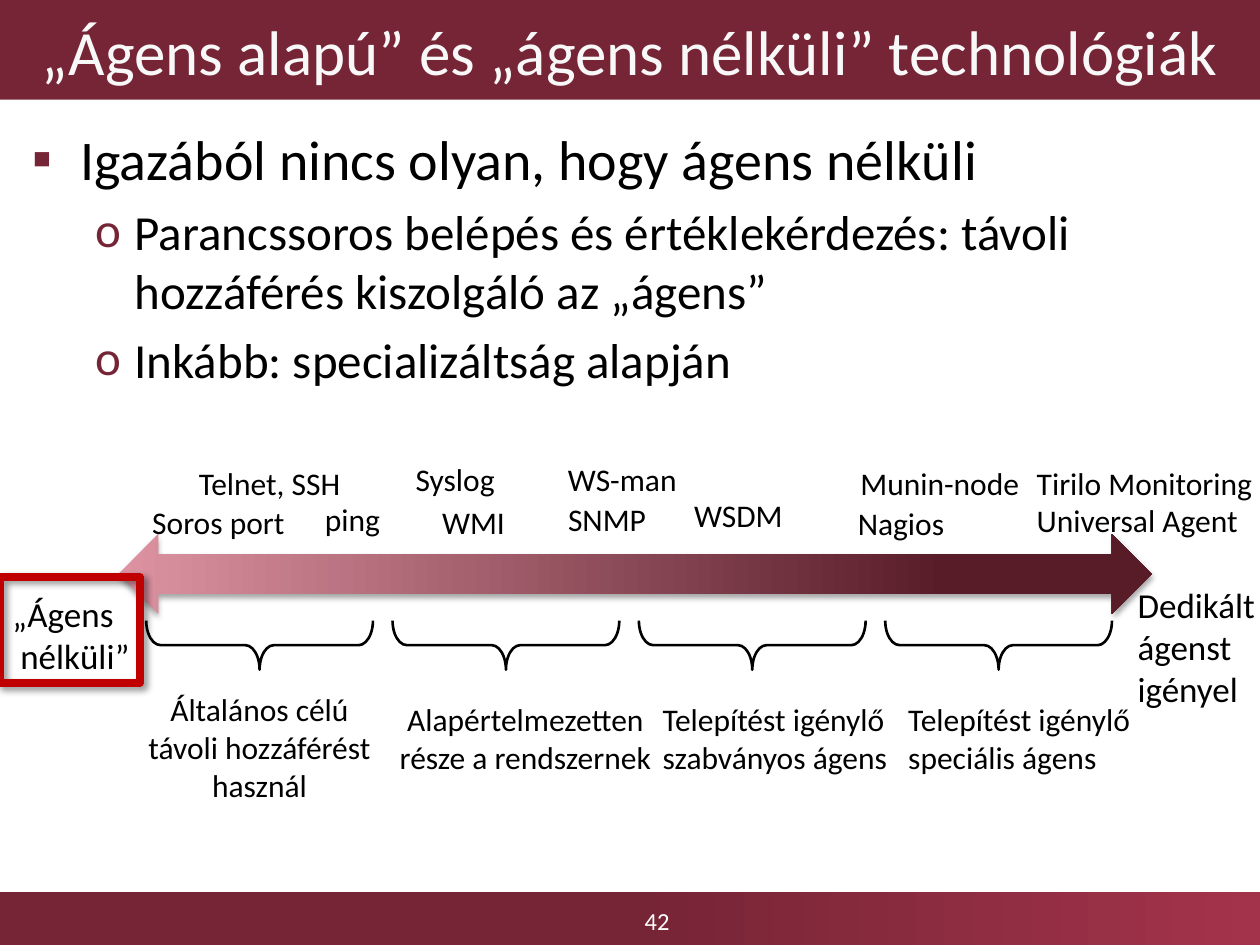
from dataclasses import dataclass

from lxml.etree import SubElement
from pptx import Presentation
from pptx.dml.color import RGBColor
from pptx.enum.shapes import MSO_SHAPE
from pptx.enum.text import MSO_ANCHOR, PP_ALIGN
from pptx.oxml.ns import qn
from pptx.util import Inches, Pt


@dataclass(frozen=True)
class Theme:
    """Colours, font and type sizes of the slide."""
    font: str = "Calibri"
    band: str = "762536"
    band_end: str = "A3334B"
    arrow_start: str = "DD93A2"
    arrow_end: str = "581C28"
    frame: str = "C00000"
    ink: str = "000000"
    title_ink: str = "F8F8F8"
    page_ink: str = "FFFFFF"
    title: int = 36
    topic: int = 32
    point: int = 28
    pole: int = 20
    label: int = 18
    page: int = 14


def write(frame, text, *, size, color, font, align=PP_ALIGN.LEFT,
          anchor=MSO_ANCHOR.TOP, wrap=False):
    """Fill a text frame; newlines split paragraphs, vertical tabs split lines."""
    frame.text = text
    frame.word_wrap = wrap
    frame.vertical_anchor = anchor
    if align == PP_ALIGN.LEFT:
        frame.margin_right = 0
    for paragraph in frame.paragraphs:
        paragraph.alignment = align
        for run in paragraph.runs:
            run.font.name = font
            run.font.size = Pt(size)
            run.font.color.rgb = RGBColor.from_string(color)


class SlideBuilder:
    """Draws elements on a grid of 100 columns and 75 rows."""

    def __init__(self, deck, theme):
        """Add a blank slide to the deck."""
        self.theme = theme
        self.column = deck.slide_width / 100
        self.row = deck.slide_height / 75
        self.shapes = deck.slides.add_slide(deck.slide_layouts[6]).shapes

    def place(self, left, top, width, height):
        """Turn grid units into slide lengths."""
        return (round(left * self.column), round(top * self.row),
                round(width * self.column), round(height * self.row))

    def shape(self, kind, area, fill=None, line=None, weight=1):
        """Add a preset shape with an optional flat fill and outline."""
        shape = self.shapes.add_shape(kind, *self.place(*area))
        shape.shadow.inherit = False
        if fill:
            shape.fill.solid()
            shape.fill.fore_color.rgb = RGBColor.from_string(fill)
        else:
            shape.fill.background()
        if line:
            shape.line.color.rgb = RGBColor.from_string(line)
            shape.line.width = Pt(weight)
        else:
            shape.line.fill.background()
        return shape

    def gradient(self, shape, stops):
        """Fill a shape from left to right through (percent, colour) stops."""
        shape.fill.gradient()
        shape.fill.gradient_angle = 0
        stop_list = next(shape._element.spPr.iter(qn("a:gsLst")))
        stop_list.clear()
        for percent, color in stops:
            stop = SubElement(stop_list, qn("a:gs"), pos=str(percent * 1000))
            SubElement(stop, qn("a:srgbClr"), val=color)

    def shadow(self, shape, opacity, blur, distance, angle):
        """Give a shape an outer shadow."""
        effects = shape._element.spPr.find(qn("a:effectLst"))
        outer = SubElement(effects, qn("a:outerShdw"), blurRad=str(Pt(blur)),
                           dist=str(Pt(distance)), dir=str(angle * 60000),
                           rotWithShape="0")
        color = SubElement(outer, qn("a:srgbClr"), val=self.theme.ink)
        SubElement(color, qn("a:alpha"), val=str(opacity * 1000))

    def text(self, area, text, size, color=None, **style):
        """Add a text box."""
        frame = self.shapes.add_textbox(*self.place(*area)).text_frame
        write(frame, text, size=size, color=color or self.theme.ink,
              font=self.theme.font, **style)
        return frame

    def bullets(self, area, items):
        """Add a bulleted list of (level, text) items."""
        styles = [("▪", self.theme.topic, 0.38, 0.38),
                  ("o", self.theme.point, 0.81, 0.31)]
        frame = self.text(area, "\n".join(text for _, text in items),
                          self.theme.topic, wrap=True)
        for index, (level, _) in enumerate(items):
            mark, size, margin, hanging = styles[level]
            paragraph = frame.paragraphs[index]
            paragraph.level = level
            paragraph.space_before = Pt(size * 0.2 if index else 0)
            paragraph.runs[0].font.size = Pt(size)
            properties = paragraph._p.get_or_add_pPr()
            properties.set("marL", str(Inches(margin)))
            properties.set("indent", str(-Inches(hanging)))
            color = SubElement(properties, qn("a:buClr"))
            SubElement(color, qn("a:srgbClr"), val=self.theme.band)
            SubElement(properties, qn("a:buFont"), typeface=self.theme.font)
            SubElement(properties, qn("a:buChar"), char=mark)

    def brace(self, center, middle):
        """Add a brace that opens upward around a centre point."""
        width, height = 3.9, 18
        brace = self.shape(MSO_SHAPE.RIGHT_BRACE,
                           (center - width / 2, middle - height / 2, width, height),
                           line=self.theme.ink, weight=1.5)
        brace.rotation = 90
        brace.adjustments[0] = 0.292
        brace.adjustments[1] = 0.5


def main():
    """Build and save the slide."""
    deck = Presentation()
    deck.slide_width, deck.slide_height = Inches(10), Inches(7.5)
    theme = Theme()
    slide = SlideBuilder(deck, theme)
    centered = {"align": PP_ALIGN.CENTER, "anchor": MSO_ANCHOR.MIDDLE, "wrap": True}

    footer = slide.shape(MSO_SHAPE.RECTANGLE, (0, 70.8, 100, 4.2))
    slide.gradient(footer, [(0, theme.band), (50, theme.band), (100, theme.band_end)])
    slide.text((35.9, 71.1, 32.5, 3.9), "42", theme.page, theme.page_ink, **centered)

    title = slide.shape(MSO_SHAPE.RECTANGLE, (0, 0, 100, 7.9), fill=theme.band)
    write(title.text_frame, "„Ágens alapú” és „ágens nélküli” technológiák",
          size=theme.title, color=theme.title_ink, font=theme.font, **centered)

    slide.bullets((1.6, 9.4, 96.9, 60.5), [
        (0, "Igazából nincs olyan, hogy ágens nélküli"),
        (1, "Parancssoros belépés és értéklekérdezés: távoli hozzáférés "
            "kiszolgáló az „ágens”"),
        (1, "Inkább: specializáltság alapján"),
    ])

    scale = slide.shape(MSO_SHAPE.LEFT_RIGHT_ARROW, (9.4, 42.4, 82, 6.3))
    slide.gradient(scale, [(0, theme.arrow_start), (80, theme.arrow_end),
                           (100, theme.arrow_end)])
    slide.shadow(scale, 35, 3.1, 1.8, 90)

    slide.text((0, 46.5, 11.1, 7.7), "„Ágens\v nélküli”", theme.pole)
    slide.text((89.3, 45.8, 10.7, 11), "Dedikált\nágenst\vigényel", theme.pole)

    technologies = [
        (14.8, 36.3, 13, "Telnet, SSH"), (11.1, 39.4, 12.5, "Soros port"),
        (24.8, 39.2, 7, "ping"), (32, 36, 8.5, "Syslog"), (34.1, 39.4, 7.5, "WMI"),
        (44.1, 36, 11, "WS-man"), (44.1, 39.2, 8.5, "SNMP"),
        (54.1, 38.9, 9.5, "WSDM"), (67.3, 36.3, 14.5, "Munin-node"),
        (67.1, 39.5, 9, "Nagios"),
        (81.3, 36.3, 18.7, "Tirilo Monitoring\nUniversal Agent"),
    ]
    for left, top, width, name in technologies:
        slide.text((left, top, width, 4 + 3 * name.count("\n")), name, theme.label)

    categories = [
        (10.6, 54.3, 20, PP_ALIGN.CENTER,
         "Általános célú\ntávoli hozzáférést\nhasznál"),
        (30.7, 55.1, 22, PP_ALIGN.CENTER, "Alapértelmezetten\nrésze a rendszernek"),
        (51.6, 55.1, 19.5, PP_ALIGN.LEFT, "Telepítést igénylő\nszabványos ágens"),
        (71.1, 55.1, 19.5, PP_ALIGN.LEFT, "Telepítést igénylő\nspeciális ágens"),
    ]
    for index, (left, top, width, align, description) in enumerate(categories):
        slide.brace(20.6 + index * 19.55, 51.2)
        slide.text((left, top, width, 10), description, theme.label, align=align)

    highlight = slide.shape(MSO_SHAPE.RECTANGLE, (0, 45.8, 11.1, 8.4),
                            line=theme.frame, weight=4.5)
    slide.shadow(highlight, 40, 4, 3, 45)

    deck.save("out.pptx")


if __name__ == "__main__":
    main()
